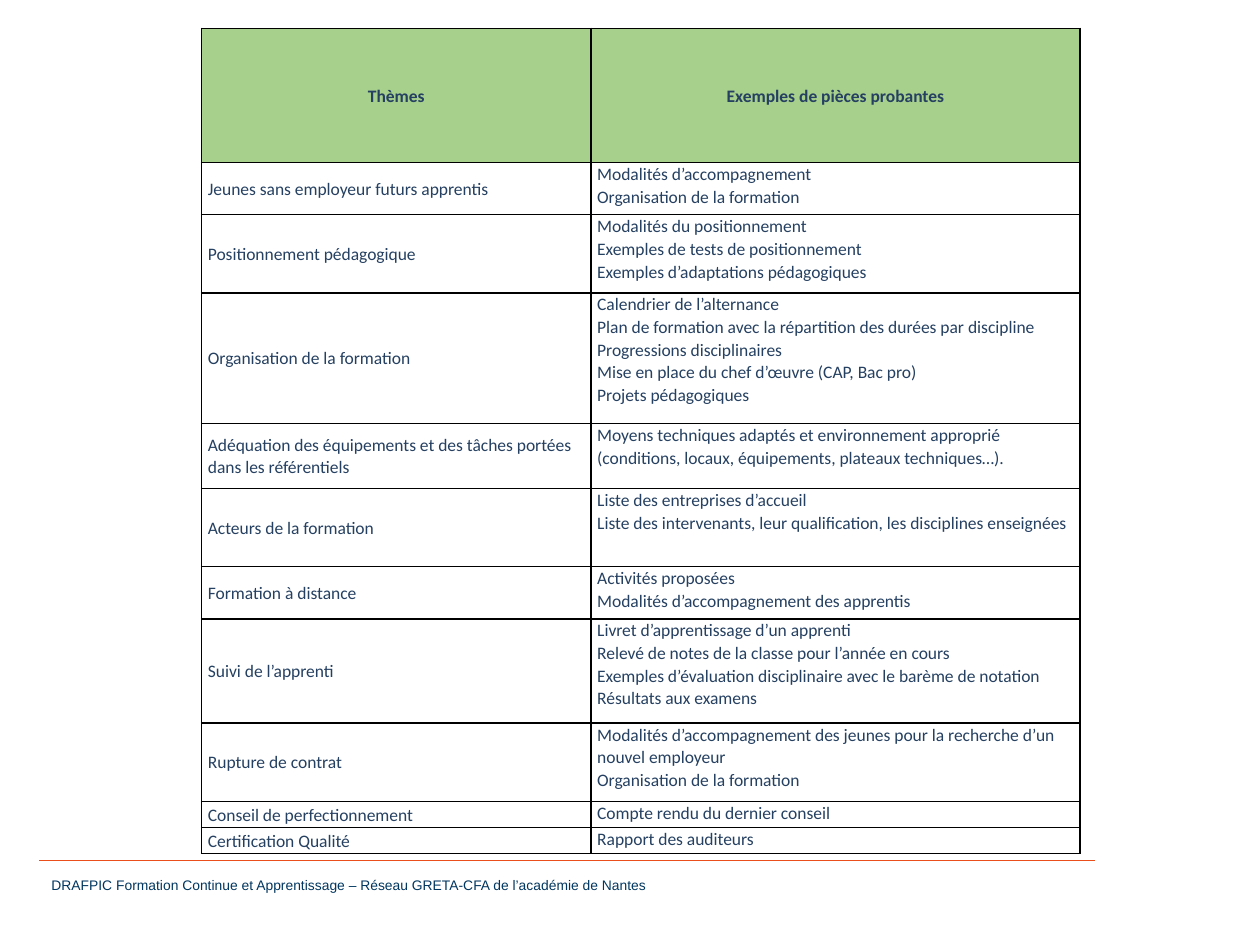
from lxml import etree
from pptx import Presentation
from pptx.dml.color import RGBColor
from pptx.enum.shapes import MSO_CONNECTOR
from pptx.enum.text import MSO_ANCHOR, MSO_AUTO_SIZE, PP_ALIGN
from pptx.oxml.ns import qn
from pptx.util import Inches, Pt

STRAIGHT = MSO_CONNECTOR.STRAIGHT
MIDDLE, TOP = MSO_ANCHOR.MIDDLE, MSO_ANCHOR.TOP
CENTER, LEFT = PP_ALIGN.CENTER, PP_ALIGN.LEFT
FIT_SHAPE = MSO_AUTO_SIZE.SHAPE_TO_FIT_TEXT

WIDTH, HEIGHT = 10, 7.5
ROW_UNIT = 0.207
COLORS = {
    "header": "A8D08D",
    "text": "254061",
    "border": "000000",
    "rule": "E94E1B",
    "footer": "00365F",
}
HEADER = (5.15, "Thèmes", ["Exemples de pièces probantes"])
THEMES = [
    (2, "Jeunes sans employeur futurs apprentis",
     ["Modalités d’accompagnement", "Organisation de la formation"]),
    (3, "Positionnement pédagogique",
     ["Modalités du positionnement", "Exemples de tests de positionnement",
      "Exemples d’adaptations pédagogiques"]),
    (5, "Organisation de la formation",
     ["Calendrier de l’alternance",
      "Plan de formation avec la répartition des durées par discipline",
      "Progressions disciplinaires",
      "Mise en place du chef d’œuvre (CAP, Bac pro)",
      "Projets pédagogiques"]),
    (2.5, "Adéquation des équipements et des tâches portées dans les référentiels",
     ["Moyens techniques adaptés et environnement approprié "
      "(conditions, locaux, équipements, plateaux techniques…)."]),
    (3, "Acteurs de la formation",
     ["Liste des entreprises d’accueil",
      "Liste des intervenants, leur qualification, les disciplines enseignées"]),
    (2, "Formation à distance",
     ["Activités proposées", "Modalités d’accompagnement des apprentis"]),
    (4, "Suivi de l’apprenti",
     ["Livret d’apprentissage d’un apprenti",
      "Relevé de notes de la classe pour l’année en cours",
      "Exemples d’évaluation disciplinaire avec le barème de notation",
      "Résultats aux examens"]),
    (3, "Rupture de contrat",
     ["Modalités d’accompagnement des jeunes pour la recherche d’un nouvel employeur",
      "Organisation de la formation"]),
    (1, "Conseil de perfectionnement", ["Compte rendu du dernier conseil"]),
    (1, "Certification Qualité", ["Rapport des auditeurs"]),
]
FOOTER = "DRAFPIC Formation Continue et Apprentissage – Réseau GRETA-CFA de l’académie de Nantes"


def color(name):
    return RGBColor.from_string(COLORS[name])


def x(share):
    return Inches(WIDTH * share)


def y(share):
    return Inches(HEIGHT * share)


def style_font(font, name, size, color_name, bold=False):
    font.name, font.size, font.bold = name, Pt(size), bold
    font.color.rgb = color(color_name)


def add_borders(cell):
    tc_pr = cell._tc.get_or_add_tcPr()
    for side in ("lnL", "lnR", "lnT", "lnB"):
        line = etree.SubElement(tc_pr, qn(f"a:{side}"), w=str(Pt(1)))
        fill = etree.SubElement(line, qn("a:solidFill"))
        etree.SubElement(fill, qn("a:srgbClr"), val=COLORS["border"])


def fill_cell(cell, lines, anchor, header):
    add_borders(cell)
    if header:
        cell.fill.solid()
        cell.fill.fore_color.rgb = color("header")
    else:
        cell.fill.background()
    cell.margin_left = cell.margin_right = Inches(0.05)
    cell.margin_top = cell.margin_bottom = 0
    cell.vertical_anchor = anchor
    cell.text_frame.text = "\n".join(lines)
    for p in cell.text_frame.paragraphs:
        p.alignment = CENTER if header else LEFT
        p.line_spacing = 1.07
        for r in p.runs:
            style_font(r.font, "Calibri", 10, "text", header)


def add_themes_table(s):
    rows = [HEADER] + THEMES
    total = sum(units for units, _, _ in rows) * ROW_UNIT
    table = s.shapes.add_table(len(rows), 2, x(0.16), y(0.03),
                               x(0.697), Inches(total)).table
    table.horz_banding = False
    for column, share in zip(table.columns, (0.309, 0.388)):
        column.width = x(share)
    for i, (units, theme, examples) in enumerate(rows):
        header = i == 0
        table.rows[i].height = Inches(units * ROW_UNIT)
        fill_cell(table.cell(i, 0), [theme], MIDDLE, header)
        fill_cell(table.cell(i, 1), examples, MIDDLE if header else TOP, header)


def add_rule(s):
    rule = s.shapes.add_connector(STRAIGHT, x(0.031), y(0.91), x(0.869), y(0.91))
    rule.line.color.rgb = color("rule")
    rule.line.width = Pt(0.25)
    etree.SubElement(rule._element.spPr, qn("a:effectLst"))


def add_footer(s):
    tf = s.shapes.add_textbox(x(0.031), y(0.921), x(0.619), y(0.03)).text_frame
    tf.word_wrap = True
    tf.auto_size = FIT_SHAPE
    tf.text = FOOTER
    style_font(tf.paragraphs[0].runs[0].font, "Arial", 7.9, "footer")


def main():
    prs = Presentation()
    prs.slide_width, prs.slide_height = Inches(WIDTH), Inches(HEIGHT)
    s = prs.slides.add_slide(prs.slide_layouts[6])
    add_rule(s)
    add_footer(s)
    add_themes_table(s)
    prs.save("out.pptx")


if __name__ == "__main__":
    main()
